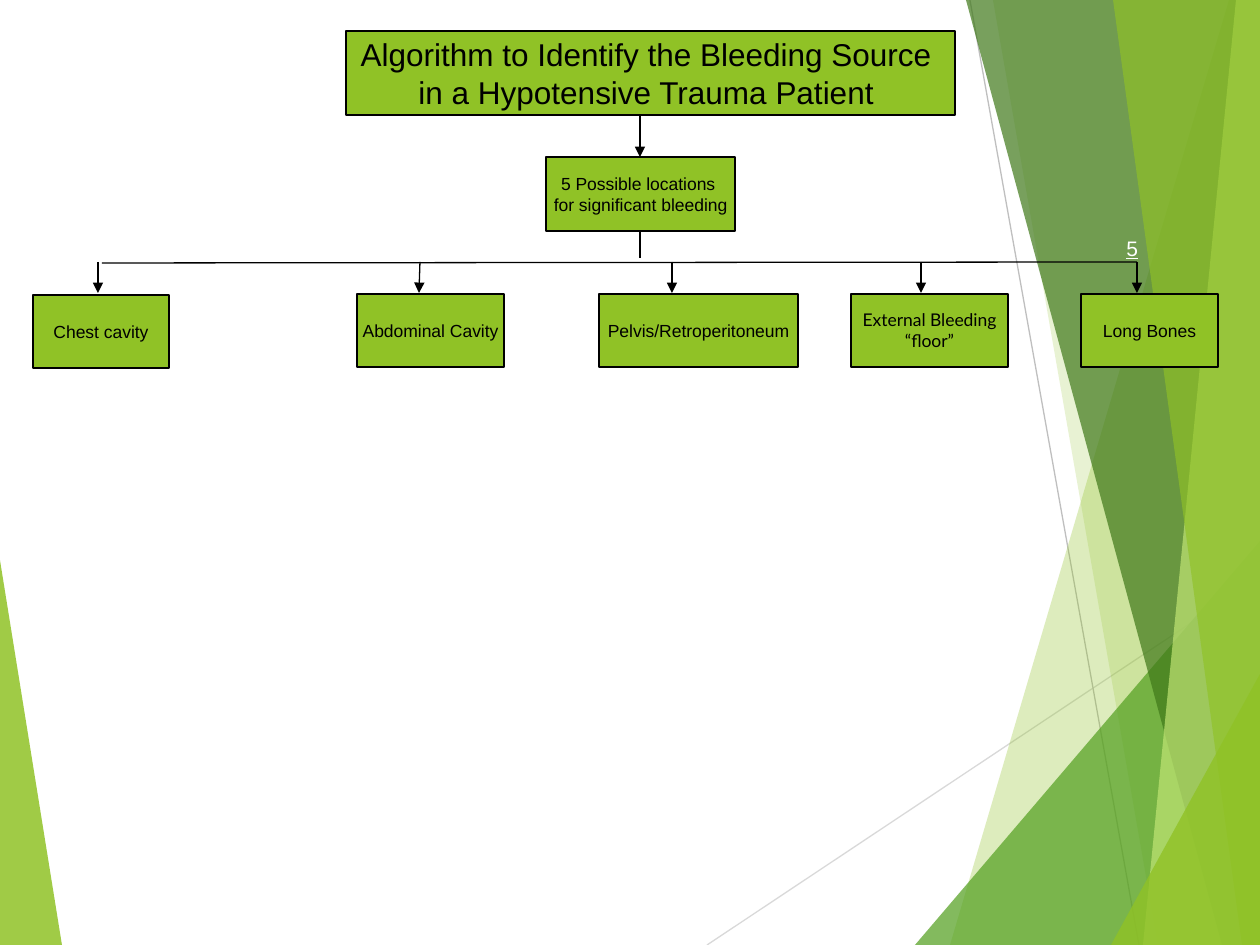
"""Build a one-slide flowchart on locating bleeding in a hypotensive trauma patient."""
from pptx import Presentation
from pptx import util as u
from pptx.dml.color import RGBColor
from pptx.enum import shapes, text
from pptx.oxml.ns import qn
from lxml import etree

PX = u.Inches(1) / 126
BLACK = RGBColor(0x00, 0x00, 0x00)
WHITE = RGBColor(0xFF, 0xFF, 0xFF)
LIME = RGBColor(0x90, 0xC2, 0x26)
GREEN = RGBColor(0x54, 0xA0, 0x21)
FOREST = RGBColor(0x3F, 0x78, 0x19)
PALE = RGBColor(0xC0, 0xE4, 0x74)
SILVER = RGBColor(0xD9, 0xD9, 0xD9)
GREY = RGBColor(0xBF, 0xBF, 0xBF)

LEFT_FACET = ([(0, 560), (62, 945), (0, 945)], LIME, 85)
RAYS = [((707, 945), (1260, 577), SILVER), ((970, 0), (1139, 945), GREY)]
RIGHT_FACETS = [
    ([(1229, 0), (950, 945), (1260, 945), (1260, 0)], LIME, 30),
    ([(993, 0), (1158, 945), (1260, 945), (1260, 0)], LIME, 20),
    ([(915, 945), (1260, 541), (1260, 945)], GREEN, 72),
    ([(966, 0), (1222, 945), (1260, 945), (1260, 0)], FOREST, 70),
    ([(1236, 0), (1143, 945), (1260, 945), (1260, 0)], PALE, 70),
    ([(1113, 0), (1242, 945), (1260, 945), (1260, 0)], LIME, 65),
    ([(1111, 945), (1260, 674), (1260, 945)], LIME, 80),
]
TITLE = ["Algorithm to Identify the Bleeding Source ", "in a Hypotensive Trauma Patient "]
LOCATIONS = ["5 Possible locations ", "for significant bleeding"]
SOURCES = [
    (["Chest cavity"], (33, 295, 136, 73), "Arial", (98, 98)),
    (["Abdominal Cavity"], (357, 294, 147, 73), "Arial", (420, 419)),
    (["Pelvis/Retroperitoneum"], (599, 294, 199, 73), "Arial", (672, 672)),
    (["External Bleeding", "“floor”"], (851, 294, 157, 73), "Lato", (921, 921)),
    (["Long Bones"], (1081, 294, 137, 73), "Arial", (1137, 1137)),
]


def px(*lengths):
    """Turn pixel lengths into EMU."""
    return [round(n * PX) for n in lengths]


def write(sp, lines, size=10, font="Arial", color=BLACK, align=text.PP_ALIGN.CENTER,
          anchor=text.MSO_ANCHOR.MIDDLE, underline=None, wrap=False):
    """Fill a shape with one formatted paragraph per line."""
    tf = sp.text_frame
    tf.word_wrap = wrap
    tf.auto_size = text.MSO_AUTO_SIZE.NONE
    tf.vertical_anchor = anchor
    for i, line in enumerate(lines):
        p = tf.paragraphs[0] if i == 0 else tf.add_paragraph()
        p.alignment = align
        r = p.add_run()
        r.text = line
        r.font.size = u.Pt(size)
        r.font.name = font
        r.font.color.rgb = color
        r.font.underline = underline


def style_box(sp):
    """Give a shape the flowchart fill and outline."""
    sp.fill.solid()
    sp.fill.fore_color.rgb = LIME
    sp.line.color.rgb = BLACK
    sp.line.width = u.Pt(0.75)


def add_title(s, lines, box):
    """Move and format the title placeholder."""
    sp = s.shapes.title
    sp.left, sp.top, sp.width, sp.height = px(*box)
    style_box(sp)
    write(sp, lines, size=18)


def add_box(s, lines, box, font="Arial"):
    """Add a flowchart rectangle."""
    sp = s.shapes.add_shape(shapes.MSO_SHAPE.RECTANGLE, *px(*box))
    sp.shadow.inherit = False
    style_box(sp)
    write(sp, lines, font=font)


def add_line(s, start, end, color=BLACK, arrow=False):
    """Add a straight line, with an arrowhead at its end if asked."""
    c = s.shapes.add_connector(shapes.MSO_CONNECTOR.STRAIGHT, *px(*start, *end))
    c.line.color.rgb = color
    c.line.width = u.Pt(0.75)
    if arrow:
        etree.SubElement(c.line._get_or_add_ln(), qn("a:tailEnd"), type="triangle")
    etree.SubElement(c._element.spPr, qn("a:effectLst"))


def add_facet(s, points, color, opacity):
    """Add a translucent polygon of the background."""
    builder = s.shapes.build_freeform(*points[0], scale=PX)
    builder.add_line_segments(points[1:], close=True)
    sp = builder.convert_to_shape()
    sp.shadow.inherit = False
    sp.line.fill.background()
    sp.fill.solid()
    sp.fill.fore_color.rgb = color
    fill = sp._element.spPr.find(qn("a:solidFill"))
    etree.SubElement(fill[0], qn("a:alpha"), val=str(opacity * 1000))


def add_background(s):
    """Draw the facets and rays behind the flowchart."""
    add_facet(s, *LEFT_FACET)
    for ray in RAYS:
        add_line(s, *ray)
    for facet in RIGHT_FACETS:
        add_facet(s, *facet)


def main():
    """Build and save the slide."""
    prs = Presentation()
    prs.slide_width, prs.slide_height = px(1260, 945)
    s = prs.slides.add_slide(prs.slide_layouts[5])
    add_background(s)
    add_title(s, TITLE, (346, 31, 609, 84))
    add_box(s, LOCATIONS, (546, 157, 189, 74))
    add_line(s, (640, 115), (640, 157), arrow=True)
    add_line(s, (640, 231), (640, 258))
    add_line(s, (102, 263), (1137, 262))
    for lines, box, font, (x_start, x_end) in SOURCES:
        add_box(s, lines, box, font)
        add_line(s, (x_start, 262), (x_end, 293), arrow=True)
    number = s.shapes.add_textbox(*px(1114, 229, 37, 38))
    write(number, ["5"], size=12, color=WHITE, align=text.PP_ALIGN.LEFT,
          anchor=text.MSO_ANCHOR.TOP, underline=True, wrap=True)
    prs.save("out.pptx")


if __name__ == "__main__":
    main()
